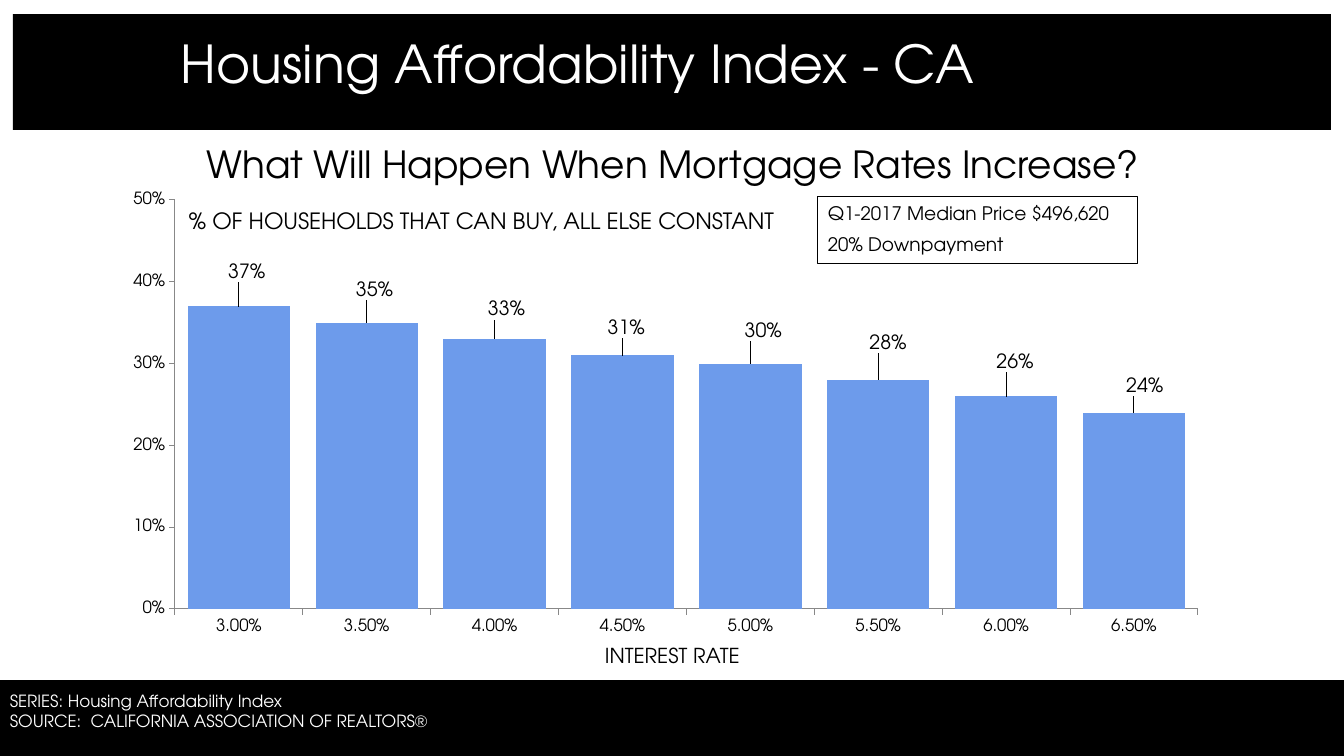
import pptx
import pptx.chart.data
import pptx.dml.color
import pptx.enum.chart
import pptx.enum.shapes
import pptx.enum.text
import pptx.oxml
import pptx.util

EMU_PER_PX = 914400 / 100.8
FONT = "TeX Gyre Adventor"
BLACK, WHITE, BLUE, GRAY = "000000", "FFFFFF", "6D9BEB", "888888"
ANCHOR = pptx.enum.text.MSO_ANCHOR
ALIGN = pptx.enum.text.PP_ALIGN

RATES = ["3.00%", "3.50%", "4.00%", "4.50%", "5.00%", "5.50%", "6.00%", "6.50%"]
SHARES = [0.37, 0.35, 0.33, 0.31, 0.30, 0.28, 0.26, 0.24]
# Shift of each value label from its usual place above the bar, in px
LABEL_SHIFTS = [(8, -20), (8, -18), (12, -15), (4, -13),
                (13, -18), (10, -22), (9, -20), (11, -12)]


def px(length):
    return pptx.util.Emu(round(length * EMU_PER_PX))


def color(hex_string):
    return pptx.dml.color.RGBColor.from_string(hex_string)


def style_font(font, size, hex_string=BLACK):
    font.name = FONT
    font.size = pptx.util.Pt(size)
    font.bold = False
    font.color.rgb = color(hex_string)


def write_text(shape, text, size, hex_string=BLACK, align=ALIGN.LEFT,
               anchor=ANCHOR.TOP, line_spacing=None, gap=0, wrap=True):
    """Fill a shape with text; gap is the space in points between paragraphs."""
    frame = shape.text_frame
    frame.text = text
    frame.word_wrap = wrap
    frame.vertical_anchor = anchor
    for index, paragraph in enumerate(frame.paragraphs):
        paragraph.alignment = align
        if line_spacing:
            paragraph.line_spacing = line_spacing
        if index and gap:
            paragraph.space_before = pptx.util.Pt(gap)
        for run in paragraph.runs:
            style_font(run.font, size, hex_string)


def add_text(slide, left, top, width, height, text, size, **options):
    box = slide.shapes.add_textbox(px(left), px(top), px(width), px(height))
    write_text(box, text, size, **options)


def add_rectangle(slide, left, top, width, height, fill, line=None):
    shape = slide.shapes.add_shape(pptx.enum.shapes.MSO_SHAPE.RECTANGLE,
                                   px(left), px(top), px(width), px(height))
    shape.shadow.inherit = False
    shape.fill.solid()
    shape.fill.fore_color.rgb = color(fill)
    if line:
        shape.line.color.rgb = color(line)
        shape.line.width = pptx.util.Pt(0.75)
    else:
        shape.line.fill.background()
    return shape


def manual_layout(inner=False, **fractions):
    target = '<c:layoutTarget val="inner"/>' if inner else ""
    modes = '<c:xMode val="edge"/><c:yMode val="edge"/>' if inner else ""
    values = "".join(f'<c:{name} val="{value:.4f}"/>' for name, value in fractions.items())
    return pptx.oxml.parse_xml(
        '<c:layout xmlns:c="http://schemas.openxmlformats.org/drawingml/2006/chart">'
        f"<c:manualLayout>{target}{modes}{values}</c:manualLayout></c:layout>")


def style_axis(axis):
    axis.has_major_gridlines = False
    axis.major_tick_mark = pptx.enum.chart.XL_TICK_MARK.OUTSIDE
    axis.format.line.color.rgb = color(GRAY)
    axis.format.line.width = pptx.util.Pt(0.75)
    style_font(axis.tick_labels.font, 12)


def add_affordability_chart(slide, left, top, width, height):
    data = pptx.chart.data.CategoryChartData(number_format="0%")
    data.categories = RATES
    data.add_series("Series 1", SHARES)
    chart = slide.shapes.add_chart(
        pptx.enum.chart.XL_CHART_TYPE.COLUMN_CLUSTERED,
        px(left), px(top), px(width), px(height), data).chart
    chart.has_title = False
    chart.has_legend = False
    style_font(chart.font, 14)

    style_axis(chart.category_axis)
    style_axis(chart.value_axis)
    chart.value_axis.minimum_scale = 0
    chart.value_axis.maximum_scale = 0.5
    chart.value_axis.major_unit = 0.1
    chart.value_axis.tick_labels.number_format = "0%"
    chart.value_axis.tick_labels.number_format_is_linked = False

    plot = chart.plots[0]
    plot.gap_width = 25
    plot.vary_by_categories = False
    series = plot.series[0]
    series.format.fill.solid()
    series.format.fill.fore_color.rgb = color(BLUE)
    labels = series.data_labels
    labels.show_value = True
    labels.number_format = "0%"
    labels.number_format_is_linked = False
    labels.position = pptx.enum.chart.XL_LABEL_POSITION.OUTSIDE_END
    style_font(labels.font, 14)
    for index in range(len(SHARES)):
        label = series.points[index].data_label
        label.position = pptx.enum.chart.XL_LABEL_POSITION.OUTSIDE_END
        style_font(label.font, 14)
    label_ids = chart.element.xpath(".//c:dLbl/c:idx")
    for label_id, (shift_x, shift_y) in zip(label_ids, LABEL_SHIFTS):
        label_id.addnext(manual_layout(x=shift_x / width, y=shift_y / height))

    plot_area = chart.element.xpath(".//c:plotArea")[0]
    for layout in plot_area.xpath("./c:layout"):
        plot_area.remove(layout)
    plot_area.insert(0, manual_layout(inner=True, x=63 / width, y=17 / height,
                                      w=1023 / width, h=409 / height))


def add_header(slide, left, top, width, height):
    add_rectangle(slide, left, top, width, height, BLACK)
    add_text(slide, left + 158, top + 19, width - 172, 68,
             "Housing Affordability Index - CA", 37.3, hex_string=WHITE,
             anchor=ANCHOR.MIDDLE, line_spacing=0.9)


def add_body(slide, left, top, width, height):
    add_text(slide, left, top, width, height,
             "What Will Happen When Mortgage Rates Increase?", 26.7,
             align=ALIGN.CENTER, line_spacing=0.9)
    add_affordability_chart(slide, left + 43, top + 42, 1109, 461)
    assumptions = add_rectangle(slide, left + 749, top + 56, 320, 67, WHITE, BLACK)
    write_text(assumptions, "Q1-2017 Median Price $496,620\n20% Downpayment", 13.3, gap=6.5)
    add_text(slide, left + 526, top + 497, 194, 35, "INTEREST RATE", 14.7)
    add_text(slide, left + 110, top + 61, 718, 37,
             "% OF HOUSEHOLDS THAT CAN BUY, ALL ELSE CONSTANT", 16)


def add_footer(slide, left, top, width, height):
    add_rectangle(slide, left, top, width, height, BLACK)
    add_text(slide, left, top + 6, 450, 50,
             "SERIES: Housing Affordability Index\n"
             "SOURCE:  CALIFORNIA ASSOCIATION OF REALTORS®",
             12, hex_string=WHITE, wrap=False)


def main():
    presentation = pptx.Presentation()
    presentation.slide_width = px(1344)
    presentation.slide_height = px(756)
    slide = presentation.slides.add_slide(presentation.slide_layouts[6])
    add_footer(slide, 0, 680, 1344, 76)
    add_header(slide, 13, 14, 1318, 116)
    add_body(slide, 69, 141, 1208, 523)
    presentation.save("out.pptx")


if __name__ == "__main__":
    main()
